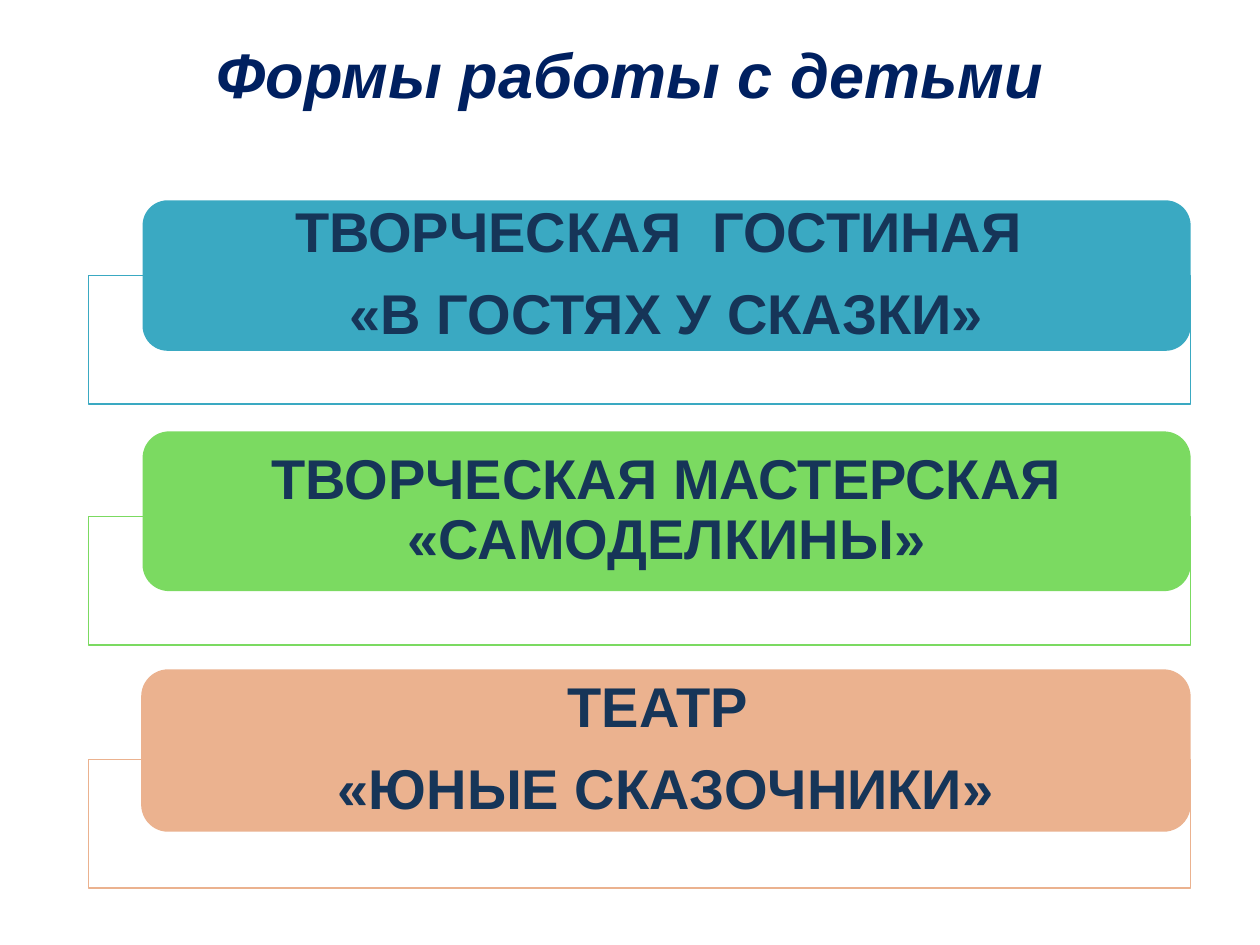
from pptx import Presentation
from pptx.dml.color import RGBColor
from pptx.enum.shapes import MSO_SHAPE
from pptx.enum.text import MSO_ANCHOR, MSO_AUTO_SIZE, PP_ALIGN
from pptx.util import Pt

NAVY = RGBColor(0x00, 0x20, 0x60)
INK = RGBColor(0x16, 0x35, 0x58)
WHITE = RGBColor(0xFF, 0xFF, 0xFF)
TEAL = RGBColor(0x3A, 0xA9, 0xC2)
GREEN = RGBColor(0x7B, 0xDA, 0x61)
PEACH = RGBColor(0xEB, 0xB2, 0x8F)


def style(para, size, color):
    para.alignment = PP_ALIGN.CENTER
    font = para.font
    font.name = "Arial"
    font.size = Pt(size)
    font.bold = True
    font.color.rgb = color


def block(kind, left, top, width, height, fill):
    shape = slide.shapes.add_shape(kind, Pt(left), Pt(top), Pt(width), Pt(height))
    shape.shadow.inherit = False
    shape.fill.solid()
    shape.fill.fore_color.rgb = fill
    return shape


deck = Presentation()
deck.slide_width = Pt(720)
deck.slide_height = Pt(540)
slide = deck.slides.add_slide(deck.slide_layouts[5])

title = slide.shapes.title
title.left, title.top = Pt(0), Pt(16.5)
title.width, title.height = Pt(720), Pt(51)
frame = title.text_frame
frame.text = "Формы работы с детьми"
frame.auto_size = MSO_AUTO_SIZE.NONE
frame.vertical_anchor = MSO_ANCHOR.TOP
style(frame.paragraphs[0], 36, NAVY)
frame.paragraphs[0].font.italic = True

RIGHT = 680.4
forms = [
    (TEAL, 157.5, 81.5, 114.5, 86, ["ТВОРЧЕСКАЯ  ГОСТИНАЯ ", "«В ГОСТЯХ У СКАЗКИ»"]),
    (GREEN, 295.2, 81.5, 246.5, 91.3, ["ТВОРЧЕСКАЯ МАСТЕРСКАЯ «САМОДЕЛКИНЫ»"]),
    (PEACH, 434, 80.7, 382.5, 92.8, ["ТЕАТР ", "«ЮНЫЕ СКАЗОЧНИКИ»"]),
]

for color, base, left, top, height, lines in forms:
    panel = block(MSO_SHAPE.RECTANGLE, 50.4, base, RIGHT - 50.4, 73.4, WHITE)
    panel.line.color.rgb = color
    panel.line.width = Pt(0.75)

    card = block(MSO_SHAPE.ROUNDED_RECTANGLE, left, top, RIGHT - left, height, color)
    card.line.fill.background()
    frame = card.text_frame
    frame.word_wrap = True
    frame.vertical_anchor = MSO_ANCHOR.MIDDLE
    frame.margin_left = frame.margin_right = Pt(16.5)
    frame.margin_top = frame.margin_bottom = Pt(0)
    frame.text = "\n".join(lines)
    for para in frame.paragraphs:
        style(para, 32, INK)
        para.line_spacing = 0.9
    for para in frame.paragraphs[1:]:
        para.space_before = Pt(12.5)

deck.save("out.pptx")
